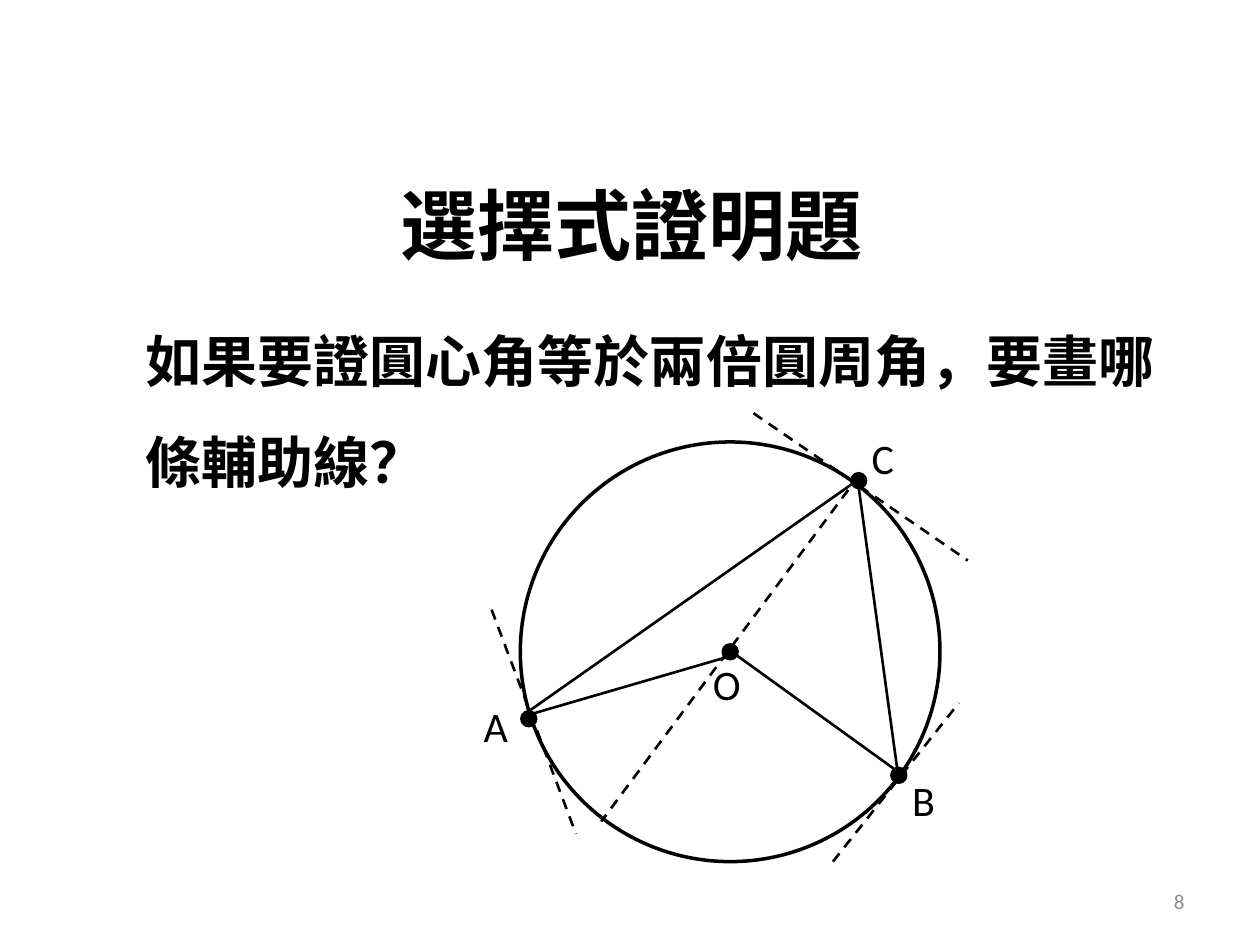
from dataclasses import dataclass

from lxml.etree import SubElement
from pptx import Presentation
from pptx.dml.color import RGBColor
from pptx.enum.dml import MSO_LINE_DASH_STYLE as Dash
from pptx.enum.shapes import MSO_CONNECTOR as Connector, MSO_SHAPE as ShapeKind
from pptx.enum.text import MSO_ANCHOR as Anchor, PP_ALIGN as Align
from pptx.oxml.ns import qn
from pptx.shapes.shapetree import GroupShapes, SlideShapes
from pptx.util import Cm, Pt

COLORS = {"ink": "000000", "paper": "FFFFFF", "page_number": "8C8C8C"}


@dataclass(frozen=True)
class Point:
    x: float
    y: float


@dataclass(frozen=True)
class Segment:
    start: Point
    end: Point
    dashed: bool = False


@dataclass(frozen=True)
class TextBlock:
    text: str
    left: float
    top: float
    width: float
    height: float
    font: dict
    color: str = "ink"
    anchor: Anchor = Anchor.TOP
    paragraph: dict | None = None


CENTER = Point(14.72, 13.14)
RADIUS = 4.23
DOT_RADIUS = 0.14
VERTICES = [Point(17.31, 9.69), Point(10.66, 14.49), Point(18.12, 15.63), CENTER]
LABELS = {
    "A": Point(9.5, 14),
    "B": Point(18.14, 15.49),
    "C": Point(17.32, 8.59),
    "O": Point(14.12, 13.16),
}
SEGMENTS = [
    Segment(Point(15.19, 8.33), Point(19.51, 11.3), True),
    Segment(Point(16.79, 17.37), Point(19.33, 14.17), True),
    Segment(Point(9.91, 12.29), Point(11.61, 16.81), True),
    Segment(Point(17.32, 9.58), Point(12.12, 16.56), True),
    Segment(Point(17.3, 9.75), Point(18.11, 15.67)),
    Segment(Point(10.52, 14.45), Point(14.71, 13.23)),
    Segment(Point(17.4, 9.6), Point(10.57, 14.4)),
    Segment(Point(14.78, 13.16), Point(18.19, 15.62)),
]
TITLE = TextBlock(
    "選擇式證明題", 1.3, 2.92, 22.86, 3.18,
    {"name": "TeX Gyre Bonum", "size": Pt(44), "bold": True},
    anchor=Anchor.MIDDLE, paragraph={"alignment": Align.CENTER},
)
QUESTION = TextBlock(
    "如果要證圓心角等於兩倍圓周角，要畫哪條輔助線？", 2.69, 5.79, 21.44, 10.9,
    {"name": "Calibri", "size": Pt(32), "bold": True},
    paragraph={"line_spacing": 1.5, "space_before": Pt(6.4)},
)
PAGE_NUMBER = TextBlock(
    "8", 18.21, 17.65, 5.92, 1.02, {"name": "Calibri", "size": Pt(12)},
    "page_number", Anchor.MIDDLE, {"alignment": Align.RIGHT},
)


def color(name: str) -> RGBColor:
    return RGBColor.from_string(COLORS[name])


def apply_format(target: object, values: dict) -> None:
    for name, value in values.items():
        setattr(target, name, value)


def draw_text(shapes: SlideShapes | GroupShapes, block: TextBlock) -> None:
    shape = shapes.add_textbox(
        Cm(block.left), Cm(block.top), Cm(block.width), Cm(block.height)
    )
    frame = shape.text_frame
    apply_format(frame, {"word_wrap": True, "vertical_anchor": block.anchor})
    paragraph = frame.paragraphs[0]
    apply_format(paragraph, block.paragraph or {})
    run = paragraph.add_run()
    run.text = block.text
    apply_format(run.font, block.font)
    run.font.color.rgb = color(block.color)


def draw_disc(
    shapes: GroupShapes, kind: ShapeKind, center: Point, radius: float, fill: str
) -> None:
    shape = shapes.add_shape(
        kind, Cm(center.x - radius), Cm(center.y - radius), Cm(2 * radius), Cm(2 * radius)
    )
    shape.shadow.inherit = False
    shape.fill.solid()
    shape.fill.fore_color.rgb = color(fill)
    shape.line.color.rgb = color("ink")
    shape.line.width = Pt(2)


def draw_segment(shapes: GroupShapes, segment: Segment) -> None:
    start, end = segment.start, segment.end
    connector = shapes.add_connector(
        Connector.STRAIGHT, Cm(start.x), Cm(start.y), Cm(end.x), Cm(end.y)
    )
    connector.line.color.rgb = color("ink")
    connector.line.width = Pt(1.5)
    if segment.dashed:
        connector.line.dash_style = Dash.DASH
    SubElement(connector.element.spPr, qn("a:effectLst"))


def draw_diagram(shapes: GroupShapes) -> None:
    draw_disc(shapes, ShapeKind.OVAL, CENTER, RADIUS, "paper")
    for segment in SEGMENTS:
        draw_segment(shapes, segment)
    for vertex in VERTICES:
        draw_disc(shapes, ShapeKind.FLOWCHART_CONNECTOR, vertex, DOT_RADIUS, "ink")
    label_font = {"name": "Calibri", "size": Pt(24)}
    for letter, corner in LABELS.items():
        draw_text(shapes, TextBlock(letter, corner.x, corner.y, 1.19, 1.27, label_font))


def main() -> None:
    presentation = Presentation()
    apply_format(presentation, {"slide_width": Cm(25.4), "slide_height": Cm(19.05)})
    slide = presentation.slides.add_slide(presentation.slide_layouts[6])
    draw_text(slide.shapes, TITLE)
    draw_text(slide.shapes, QUESTION)
    draw_diagram(slide.shapes.add_group_shape().shapes)
    draw_text(slide.shapes, PAGE_NUMBER)
    presentation.save("out.pptx")


if __name__ == "__main__":
    main()
